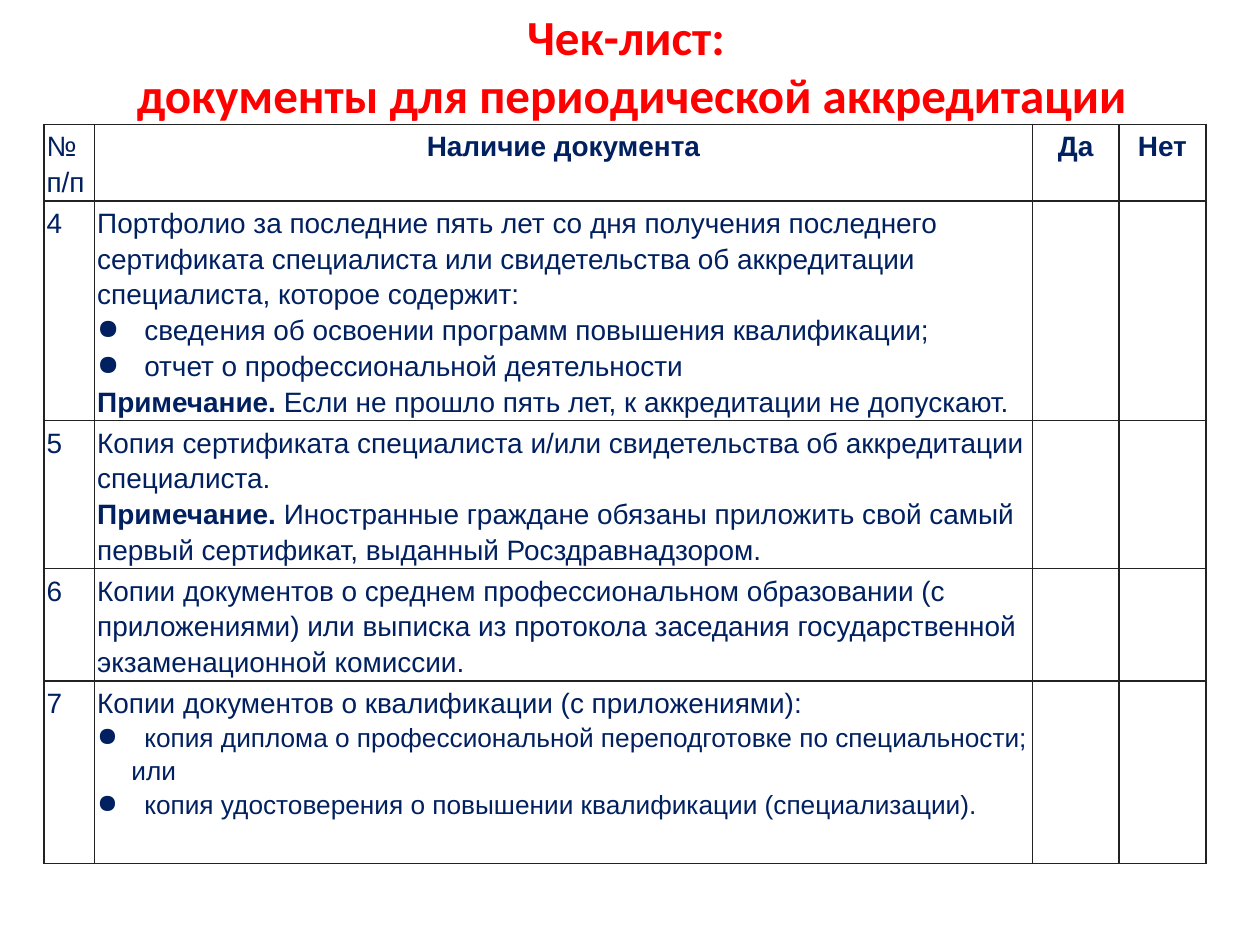
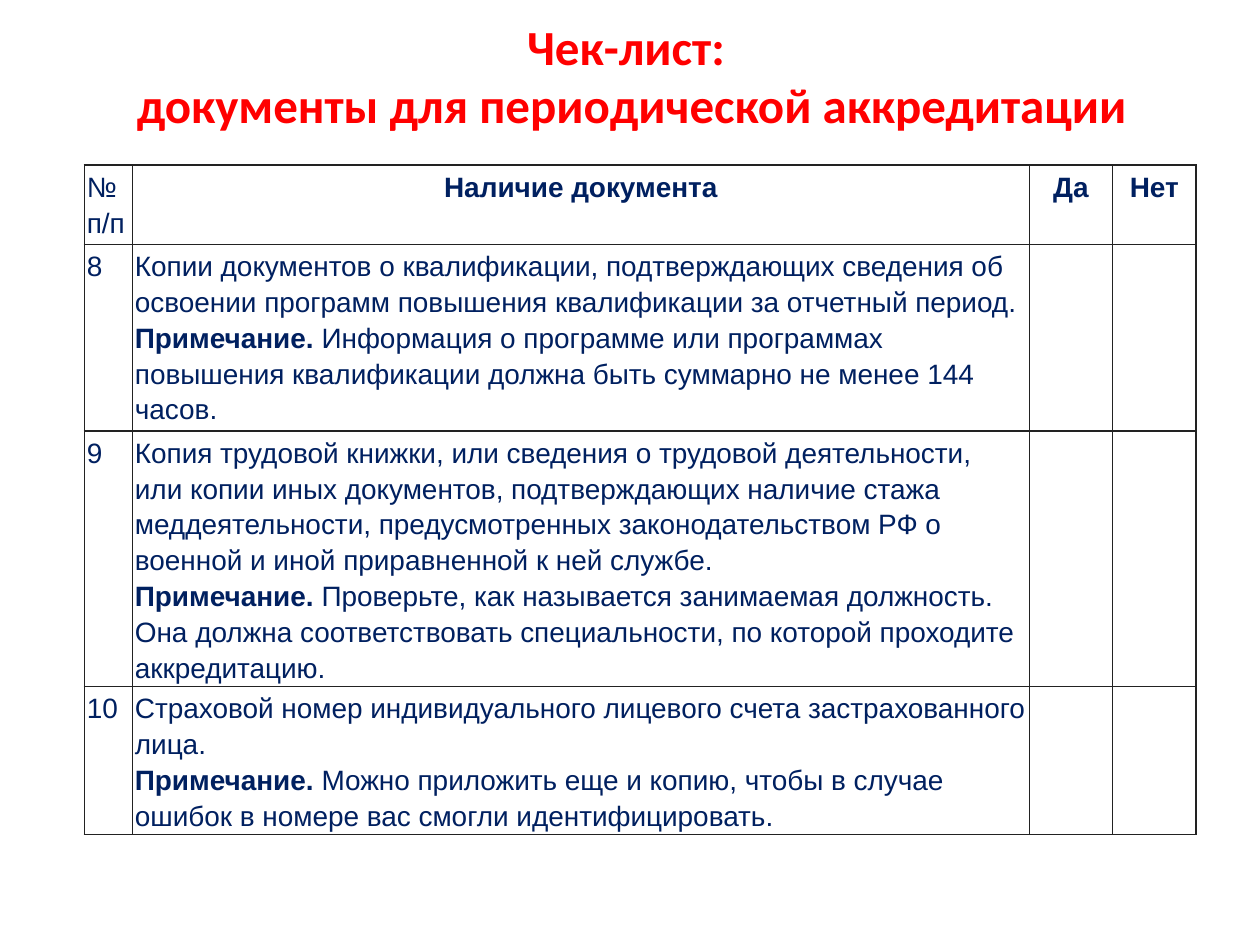
from lxml.etree import SubElement
from pptx import Presentation
from pptx.dml.color import RGBColor
from pptx.enum.text import MSO_ANCHOR, MSO_AUTO_SIZE, PP_ALIGN
from pptx.oxml import parse_xml
from pptx.oxml.ns import nsdecls, qn
from pptx.util import Cm, Pt

COLORS = {"title": "FF0000", "text": "002060", "border": "222222"}
TITLE = "Чек-лист: \vдокументы для периодической аккредитации"
HEADINGS = ["№ п/п", "Наличие документа", "Да", "Нет"]
NOTE = "Примечание."

# Paragraph styles: size in points, left margin and first-line indent in cm, bullet
STYLES = {
    "plain": (16, 0, 0, False),
    "bullet": (16, 0.95, -0.95, True),
    "small bullet": (15, 0.95, -0.95, True),
    "small indent": (15, 0.69, 0, False),
}

# Lengths in cm; each requirement is a number and its (style, text) paragraphs
CHECKLISTS = [
    {
        "title_height": 1.96,
        "corner": (0.89, 2.51),
        "columns": [1.02, 18.9, 1.75, 1.75],
        "rows": [1.52, 4.39, 2.97, 2.24, 3.68],
        "requirements": [
            ("4", [
                ("plain", "Портфолио за последние пять лет со дня получения последнего сертификата "
                          "специалиста или свидетельства об аккредитации специалиста, которое содержит:"),
                ("bullet", "сведения об освоении программ повышения квалификации;"),
                ("bullet", "отчет о профессиональной деятельности"),
                ("plain", "Примечание. Если не прошло пять лет, к аккредитации не допускают."),
            ]),
            ("5", [
                ("plain", "Копия сертификата специалиста и/или свидетельства об аккредитации специалиста."),
                ("plain", "Примечание. Иностранные граждане обязаны приложить свой самый первый "
                          "сертификат, выданный Росздравнадзором."),
            ]),
            ("6", [
                ("plain", "Копии документов о среднем профессиональном образовании (с приложениями) "
                          "или выписка из протокола заседания государственной экзаменационной комиссии."),
            ]),
            ("7", [
                ("plain", "Копии документов о квалификации (с приложениями):"),
                ("small bullet", "копия диплома о профессиональной переподготовке по специальности;"),
                ("small indent", "или"),
                ("small bullet", "копия удостоверения о повышении квалификации (специализации)."),
            ]),
        ],
    },
    {
        "title_height": 2.36,
        "corner": (1.7, 3.33),
        "columns": [0.97, 18.08, 1.68, 1.68],
        "rows": [1.6, 3.76, 4.65, 2.84],
        "requirements": [
            ("8", [
                ("plain", "Копии документов о квалификации, подтверждающих сведения об освоении "
                          "программ повышения квалификации за отчетный период."),
                ("plain", "Примечание. Информация о программе или программах повышения квалификации "
                          "должна быть суммарно не менее 144 часов."),
            ]),
            ("9", [
                ("plain", "Копия трудовой книжки, или сведения о трудовой деятельности, или копии иных "
                          "документов, подтверждающих наличие стажа меддеятельности, предусмотренных "
                          "законодательством РФ о военной и иной приравненной к ней службе."),
                ("plain", "Примечание. Проверьте, как называется занимаемая должность. Она должна "
                          "соответствовать специальности, по которой проходите аккредитацию."),
            ]),
            ("10", [
                ("plain", "Страховой номер индивидуального лицевого счета застрахованного лица."),
                ("plain", "Примечание. Можно приложить еще и копию, чтобы в случае ошибок в номере "
                          "вас смогли идентифицировать."),
            ]),
        ],
    },
]


def format_font(font, name, size, color, bold):
    font.name, font.size, font.bold = name, Pt(size), bold
    font.color.rgb = RGBColor.from_string(COLORS[color])


def write_paragraph(paragraph, text, style="plain", heading=False):
    size, margin, indent, bulleted = STYLES[style]
    paragraph.line_spacing = 1.15
    if heading:
        paragraph.alignment = PP_ALIGN.CENTER
    properties = paragraph._p.get_or_add_pPr()
    properties.set("marL", str(Cm(margin)))
    properties.set("indent", str(Cm(indent)))
    if bulleted:
        SubElement(properties, qn("a:buChar")).set("char", "●")
    # The opening word of a note is bold
    parts = [NOTE, text[len(NOTE):]] if text.startswith(NOTE) else [text]
    for part in parts:
        run = paragraph.add_run()
        run.text = part
        format_font(run.font, "Arial", size, "text", heading or part == NOTE)


deck = Presentation()
deck.slide_width, deck.slide_height = Cm(25.4), Cm(19.05)

for checklist in CHECKLISTS:
    slide = deck.slides.add_slide(deck.slide_layouts[5])

    # Title
    title = slide.shapes.title
    title.left, title.top = Cm(1.3), Cm(0.33)
    title.width, title.height = Cm(22.86), Cm(checklist["title_height"])
    title.text_frame.text = TITLE
    title.text_frame.auto_size = MSO_AUTO_SIZE.NONE
    title.text_frame.vertical_anchor = MSO_ANCHOR.MIDDLE
    title.text_frame.paragraphs[0].alignment = PP_ALIGN.CENTER
    for run in title.text_frame.paragraphs[0].runs:
        format_font(run.font, "Calibri", 28, "title", True)

    # Table grid
    columns, rows = checklist["columns"], checklist["rows"]
    left, top = checklist["corner"]
    table = slide.shapes.add_table(len(rows), len(columns), Cm(left), Cm(top),
                                   Cm(sum(columns)), Cm(sum(rows))).table
    table.first_row = table.horz_banding = False
    for column, width in zip(table.columns, columns):
        column.width = Cm(width)
    for row, height in zip(table.rows, rows):
        row.height = Cm(height)

    # Cell margins, fill and borders
    for cell in table.iter_cells():
        cell.margin_left = cell.margin_right = cell.margin_top = cell.margin_bottom = Cm(0.05)
        cell.fill.background()
        for position, side in enumerate("LRTB"):
            cell._tc.tcPr.insert(position, parse_xml(
                f'<a:ln{side} {nsdecls("a")} w="{Pt(1)}"><a:solidFill>'
                f'<a:srgbClr val="{COLORS["border"]}"/></a:solidFill></a:ln{side}>'))

    # Headings
    for index, heading in enumerate(HEADINGS):
        write_paragraph(table.cell(0, index).text_frame.paragraphs[0], heading, heading=index > 0)

    # Requirements
    for index, (number, paragraphs) in enumerate(checklist["requirements"], start=1):
        write_paragraph(table.cell(index, 0).text_frame.paragraphs[0], number)
        document = table.cell(index, 1).text_frame
        for order, (style, text) in enumerate(paragraphs):
            paragraph = document.add_paragraph() if order else document.paragraphs[0]
            write_paragraph(paragraph, text, style)

deck.save("out.pptx")
